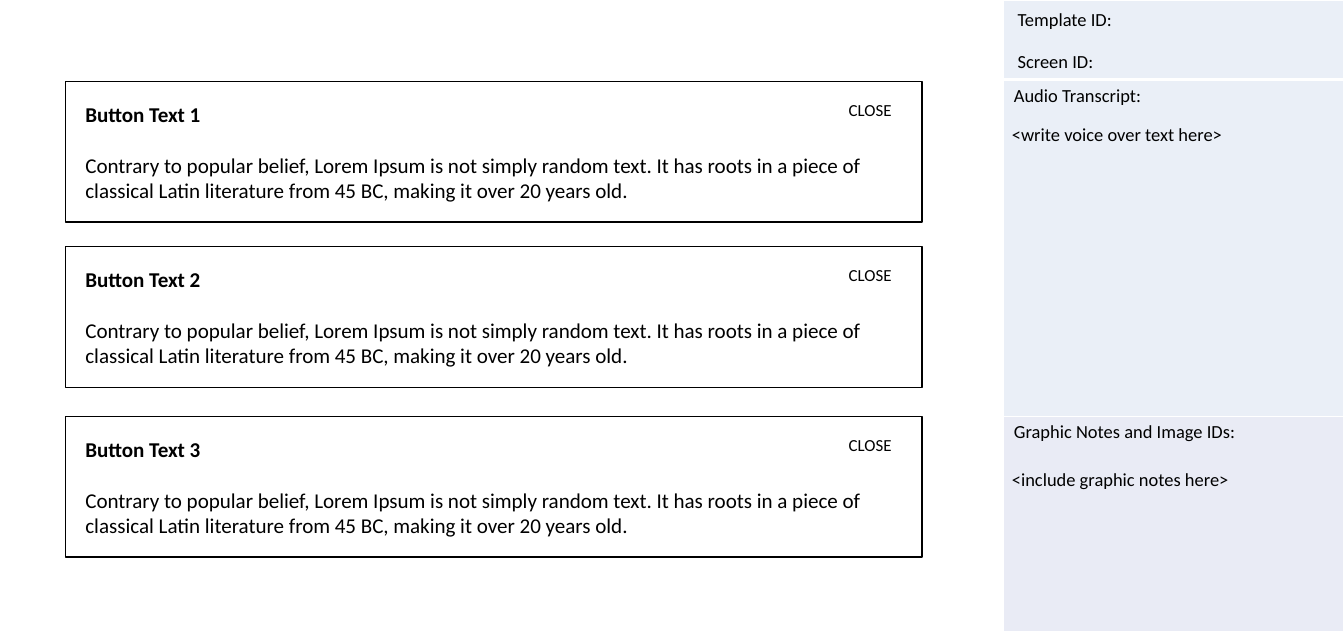
from lxml.etree import SubElement
from pptx import Presentation
from pptx.dml.color import RGBColor
from pptx.enum.shapes import MSO_SHAPE
from pptx.enum.text import MSO_ANCHOR, PP_ALIGN
from pptx.oxml.ns import qn
from pptx.util import Pt

PX = 9144
THEME = {
    "font": "Calibri",
    "text": RGBColor.from_string("000000"),
    "card": RGBColor.from_string("FFFFFF"),
    "border": "FFFFFF",
    "panel": RGBColor.from_string("EAEFF7"),
    "notes_panel": RGBColor.from_string("E9EBF5"),
    "body_size": Pt(16),
    "label_size": Pt(14),
    "close_size": Pt(12.8),
}


def write(paragraph, text, size, bold=False):
    paragraph.text = text
    paragraph.alignment = PP_ALIGN.LEFT
    paragraph.font.name = THEME["font"]
    paragraph.font.size = size
    paragraph.font.bold = bold
    paragraph.font.color.rgb = THEME["text"]


def add_label(slide, text, left, top, width, height, size):
    box = slide.shapes.add_textbox(left * PX, top * PX, width * PX, height * PX)
    box.text_frame.word_wrap = True
    write(box.text_frame.paragraphs[0], text, size)


presentation = Presentation()
presentation.slide_width = 1417 * PX
presentation.slide_height = 669 * PX
slide = presentation.slides.add_slide(presentation.slide_layouts[6])

panel_rows = [
    ("", 84, THEME["panel"], 3),
    ("Audio Transcript:", 355, THEME["panel"], 1),
    ("Graphic Notes and Image IDs:", 226, THEME["notes_panel"], 1),
]
table = slide.shapes.add_table(
    len(panel_rows), 1, 1058 * PX, 0, 359 * PX, 665 * PX
).table
table.first_row = False
table.horz_banding = False
top_width = 1
for index, (heading, height, fill, bottom_width) in enumerate(panel_rows):
    table.rows[index].height = height * PX
    cell = table.cell(index, 0)
    cell.margin_left = cell.margin_right = 11 * PX
    cell.margin_top = cell.margin_bottom = 5 * PX
    write(cell.text_frame.paragraphs[0], heading, THEME["label_size"])
    properties = cell._tc.get_or_add_tcPr()
    borders = {"lnL": 1, "lnR": 1, "lnT": top_width, "lnB": bottom_width}
    for side, width in borders.items():
        line = SubElement(properties, qn(f"a:{side}"), w=str(Pt(width)))
        line_fill = SubElement(line, qn("a:solidFill"))
        SubElement(line_fill, qn("a:srgbClr"), val=THEME["border"])
    cell.fill.solid()
    cell.fill.fore_color.rgb = fill
    top_width = bottom_width

for text, left, top, width in [
    ("Screen ID:", 1063, 48, 382),
    ("Template ID:", 1063, 4, 382),
    ("<write voice over text here>", 1057, 125, 356),
    ("<include graphic notes here>", 1057, 488, 356),
]:
    add_label(slide, text, left, top, width, 34, THEME["label_size"])

card_text = (
    "Contrary to popular belief, Lorem Ipsum is not simply random text. "
    "It has roots in a piece of classical Latin literature from 45 BC, "
    "making it over 20 years old."
)
for number, top in enumerate([86, 260, 439], start=1):
    card = slide.shapes.add_shape(
        MSO_SHAPE.RECTANGLE, 69 * PX, top * PX, 903 * PX, 148 * PX
    )
    card.shadow.inherit = False
    card.fill.solid()
    card.fill.fore_color.rgb = THEME["card"]
    card.line.color.rgb = THEME["text"]
    card.line.width = Pt(1)
    frame = card.text_frame
    frame.word_wrap = True
    frame.vertical_anchor = MSO_ANCHOR.MIDDLE
    frame.margin_left = frame.margin_right = 21 * PX
    frame.margin_top = frame.margin_bottom = 21 * PX
    write(frame.paragraphs[0], f"Button Text {number}", THEME["body_size"], True)
    body = frame.add_paragraph()
    write(body, card_text, THEME["body_size"])
    body.space_before = Pt(19.5)
    add_label(slide, "CLOSE", 885, top + 14, 87, 32, THEME["close_size"])

presentation.save("out.pptx")
